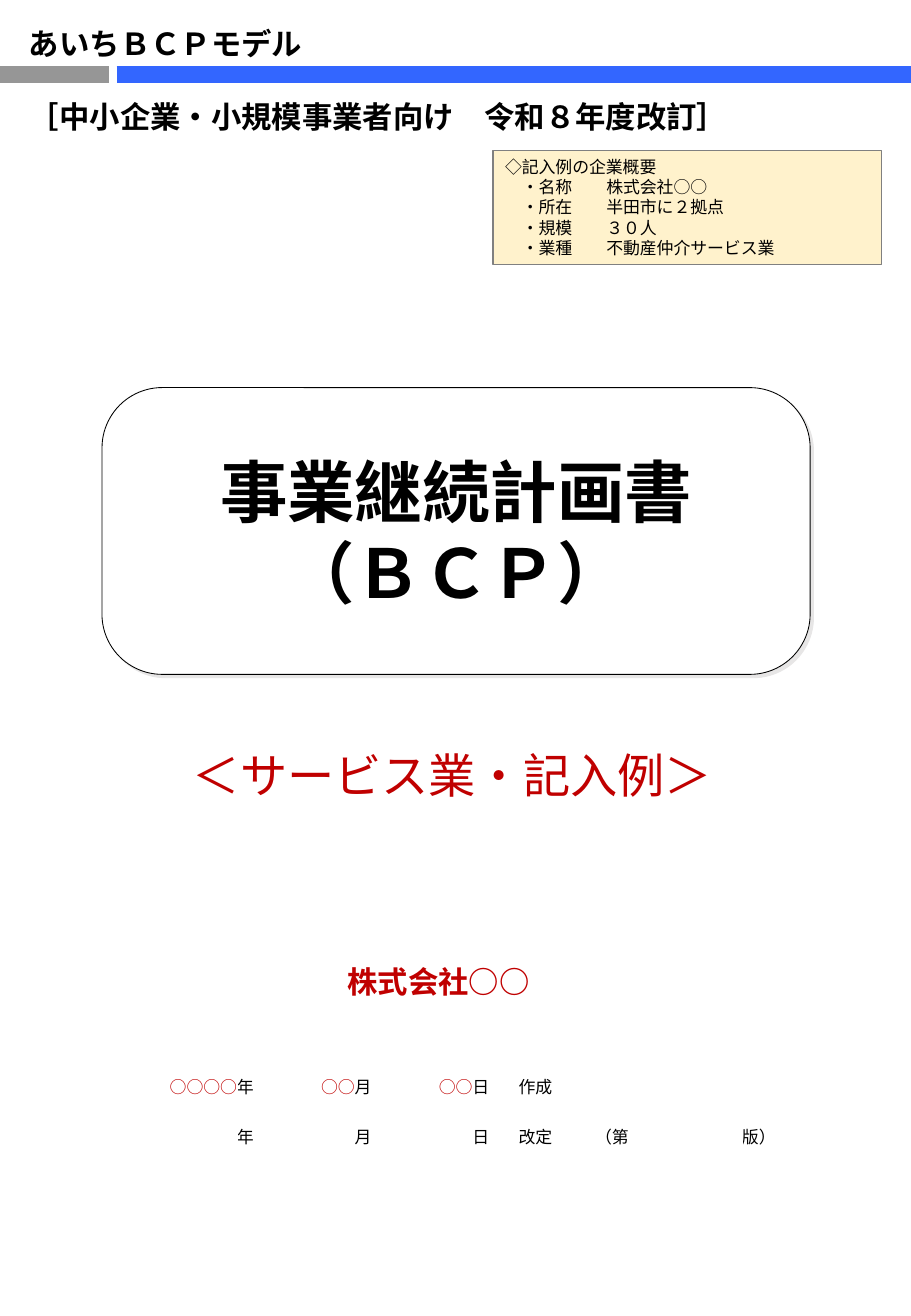
"""Build the cover page of a business continuity plan."""
from dataclasses import dataclass
from typing import Optional

from lxml.etree import SubElement
from pptx import Presentation
from pptx.dml.color import RGBColor
from pptx.enum.shapes import MSO_CONNECTOR as Connector, MSO_SHAPE as Preset
from pptx.enum.text import MSO_ANCHOR as Anchor, MSO_AUTO_SIZE as AutoSize, PP_ALIGN as Align
from pptx.oxml.ns import qn
from pptx.util import Inches, Pt

COLOURS = {"black": "000000", "white": "FFFFFF", "red": "C00000", "blue": "3366FF",
           "bar": "969696", "cream": "FFF2CC", "edge": "808080", "shade": "E7E6E6"}
GOTHIC = "Noto Sans CJK JP"
WIDTH, HEIGHT = Inches(7.5), Inches(10.83)
COLUMN, ROW = WIDTH / 750, HEIGHT / 1083
LEADING = 1.2


@dataclass(frozen=True)
class Area:
    left: float
    top: float
    width: float
    height: float

    def lengths(self) -> tuple[int, ...]:
        return (round(self.left * COLUMN), round(self.top * ROW),
                round(self.width * COLUMN), round(self.height * ROW))


@dataclass(frozen=True)
class Bar:
    start: float
    end: float
    colour: str


@dataclass(frozen=True)
class Label:
    area: Area
    text: str
    size: float
    bold: bool = False
    align: Align = Align.LEFT
    grow: bool = False


@dataclass(frozen=True)
class Entry:
    text: str = ""
    colour: str = "black"
    align: Align = Align.LEFT


BARS = [Bar(0, 90, "bar"), Bar(96, 750, "blue")]
LABELS = [
    Label(Area(56, 788, 610, 40), "株式会社○○", 18, True, Align.CENTER),
    Label(Area(149, 609, 452, 57), "＜サービス業・記入例＞", 28, grow=True),
]
COMPANY = {"名称": "株式会社○○", "所在": "半田市に２拠点",
           "規模": "３０人", "業種": "不動産仲介サービス業"}
DATE_COLUMNS = [118, 38, 59, 38, 59, 38, 63, 62, 59, 62]
DATES = [
    [Entry("○○○○", "red", Align.RIGHT), Entry("年"), Entry("○○", "red", Align.RIGHT), Entry("月"),
     Entry("○○", "red", Align.RIGHT), Entry("日"), Entry("作成"), Entry(), Entry(), Entry()],
    [Entry(), Entry("年"), Entry(), Entry("月"), Entry(), Entry("日"),
     Entry("改定"), Entry("（第"), Entry(), Entry("版）")],
]


def rgb(name: str) -> RGBColor:
    return RGBColor.from_string(COLOURS[name])


def add_span(para, text: str, *, size: float, colour: str = "black",
             bold: bool = False, face: str = GOTHIC) -> None:
    for index, part in enumerate(text.split("\n")):
        if index:
            para.add_line_break()
        span = para.add_run()
        span.text = part
        span.font.size, span.font.bold, span.font.name = Pt(size), bold, face
        span.font.color.rgb = rgb(colour)
        SubElement(span.font._element, qn("a:ea"), typeface=face)


def set_para(para, size: float, align: Align = Align.LEFT) -> None:
    para.alignment = align
    para.line_spacing = Pt(size * LEADING)


def set_frame(frame, *, wrap: bool = True, grow: bool = False, anchor: Anchor = Anchor.TOP) -> None:
    frame.word_wrap = wrap
    frame.vertical_anchor = anchor
    frame.auto_size = AutoSize.SHAPE_TO_FIT_TEXT if grow else AutoSize.NONE
    frame.margin_left = frame.margin_right = Inches(0.1)
    frame.margin_top = frame.margin_bottom = Inches(0.05)


def add_bar(page, bar: Bar) -> None:
    line = page.shapes.add_connector(Connector.STRAIGHT, round(bar.start * COLUMN), round(61 * ROW),
                                     round(bar.end * COLUMN), round(61 * ROW))
    line.line.color.rgb, line.line.width = rgb(bar.colour), Pt(10)
    SubElement(line._element.spPr, qn("a:effectLst"))


def add_panel(page, preset: Preset, area: Area, *, fill: str, edge: str, weight: float):
    box = page.shapes.add_shape(preset, *area.lengths())
    box.shadow.inherit = False
    box.fill.solid()
    box.fill.fore_color.rgb = rgb(fill)
    box.line.color.rgb, box.line.width = rgb(edge), Pt(weight)
    return box


def add_title(page) -> None:
    box = add_panel(page, Preset.ROUNDED_RECTANGLE, Area(84, 319, 583, 236),
                    fill="white", edge="black", weight=0.5)
    box.adjustments[0] = 0.21
    effects = box._element.spPr.find(qn("a:effectLst"))
    shadow = SubElement(effects, qn("a:outerShdw"), dist=str(Pt(2.8)), dir=str(45 * 60000),
                        algn="ctr", rotWithShape="0")
    SubElement(shadow, qn("a:srgbClr"), val=COLOURS["shade"])
    set_frame(box.text_frame, wrap=False, anchor=Anchor.MIDDLE)
    para = box.text_frame.paragraphs[0]
    set_para(para, 40, Align.CENTER)
    add_span(para, "事業継続計画書\n（ＢＣＰ）", size=40, bold=True)


def add_header(page) -> None:
    frame = page.shapes.add_textbox(*Area(14, 16, 626, 101).lengths()).text_frame
    set_frame(frame, grow=True)
    model, edition = frame.paragraphs[0], frame.add_paragraph()
    for para in (model, edition):
        set_para(para, 18)
    edition.space_before = Pt(18 * LEADING)
    add_span(model, "あいちＢＣＰモデル", size=18, bold=True)
    for text, face in (("［", GOTHIC), ("中小企業・小規模事業者向け　令和８年度改訂", "Arial"), ("］", GOTHIC)):
        add_span(edition, text, size=18, bold=True, face=face)


def add_label(page, label: Label) -> None:
    frame = page.shapes.add_textbox(*label.area.lengths()).text_frame
    set_frame(frame, grow=label.grow)
    set_para(frame.paragraphs[0], label.size, label.align)
    add_span(frame.paragraphs[0], label.text, size=label.size, colour="red", bold=label.bold)


def add_company(page) -> None:
    box = add_panel(page, Preset.RECTANGLE, Area(406, 124, 320, 94),
                    fill="cream", edge="edge", weight=0.75)
    frame = box.text_frame
    set_frame(frame, grow=True)
    set_para(frame.paragraphs[0], 10)
    add_span(frame.paragraphs[0], "◇記入例の企業概要", size=10)
    for heading, value in COMPANY.items():
        para = frame.add_paragraph()
        set_para(para, 10)
        stops = SubElement(para._p.get_or_add_pPr(), qn("a:tabLst"))
        SubElement(stops, qn("a:tab"), pos=str(Pt(60)), algn="l")
        add_span(para, f"　・{heading}\t{value}", size=10)


def set_borders(cell, bottom: Optional[float] = None) -> None:
    properties = cell._tc.get_or_add_tcPr()
    for side in "LRTB":
        weight = bottom if side == "B" and bottom else 1
        line = SubElement(properties, qn(f"a:ln{side}"), w=str(Pt(weight)))
        SubElement(SubElement(line, qn("a:solidFill")), qn("a:srgbClr"), val=COLOURS["white"])


def add_dates(page) -> None:
    area = Area(77, 880, sum(DATE_COLUMNS), 82)
    table = page.shapes.add_table(len(DATES), len(DATE_COLUMNS), *area.lengths()).table
    table.first_row = table.horz_banding = False
    for column, width in zip(table.columns, DATE_COLUMNS):
        column.width = round(width * COLUMN)
    for row, entries in enumerate(DATES):
        for column, entry in enumerate(entries):
            cell = table.cell(row, column)
            set_borders(cell, 3 if row == 0 else None)
            cell.fill.background()
            cell.margin_left = cell.margin_right = 0
            cell.margin_top = cell.margin_bottom = Inches(0.04)
            para = cell.text_frame.paragraphs[0]
            para.alignment = entry.align
            if entry.text:
                add_span(para, entry.text, size=10, colour=entry.colour)


def main() -> None:
    deck = Presentation()
    deck.slide_width, deck.slide_height = WIDTH, HEIGHT
    page = deck.slides.add_slide(deck.slide_layouts[6])
    for bar in BARS:
        add_bar(page, bar)
    add_title(page)
    add_header(page)
    add_dates(page)
    add_company(page)
    for label in LABELS:
        add_label(page, label)
    deck.save("out.pptx")


if __name__ == "__main__":
    main()
